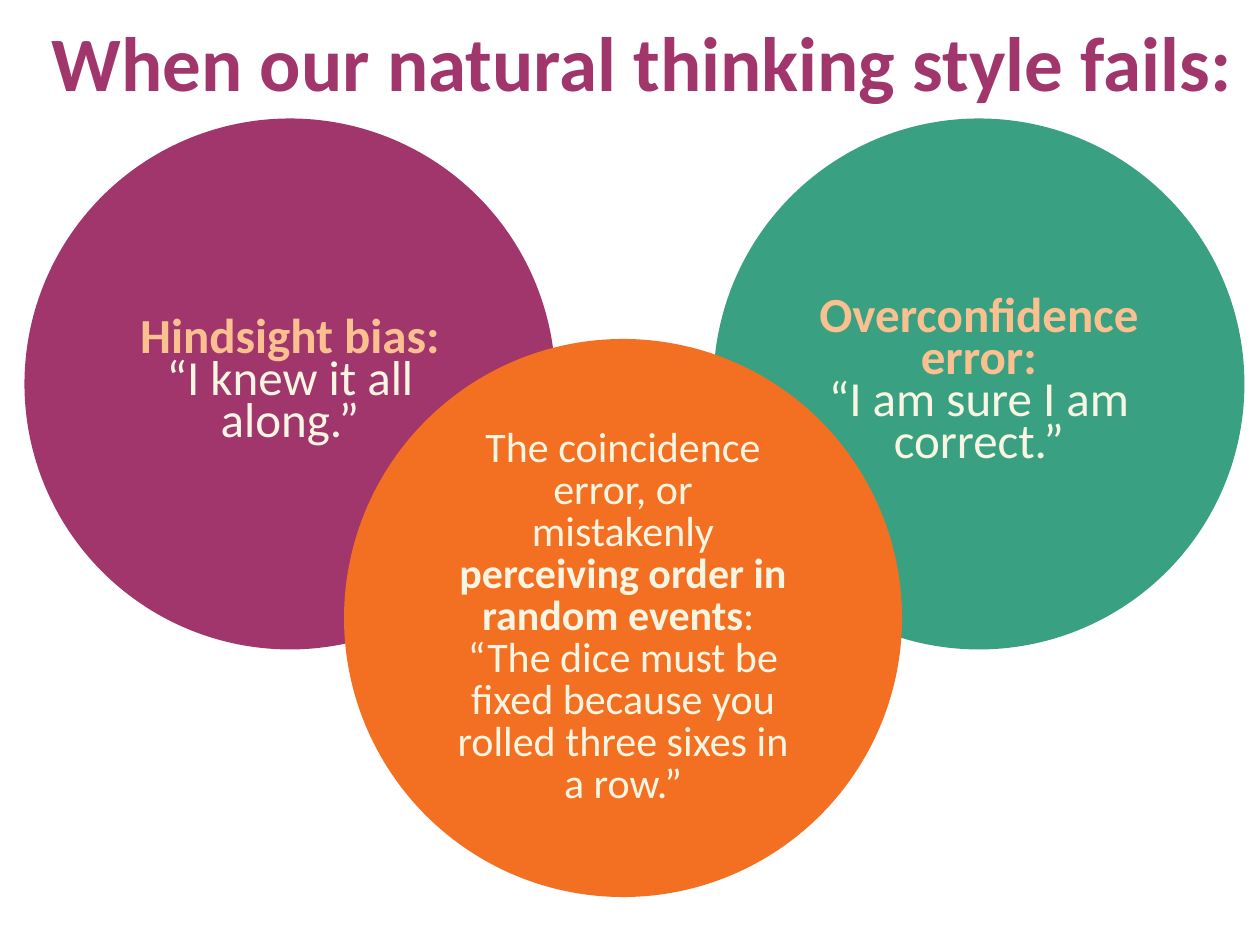
from dataclasses import dataclass

from pptx import Presentation
from pptx import util as u
from pptx.dml.color import RGBColor
from pptx.enum import shapes, text

PX_PER_INCH = 126


@dataclass(frozen=True)
class Theme:
    font: str = "Calibri"
    plum: str = "A0366C"
    green: str = "3AA082"
    orange: str = "F36F21"
    peach: str = "FAC090"
    cream: str = "F8F6E3"
    title_size: int = 44
    large: int = 28
    small: int = 24
    title_spacing: int = 42
    body_spacing: int = 24


THEME = Theme()

TITLE = "When our natural thinking style fails:"
TITLE_BOX = (0, 0, 1260, 141)
TITLE_MARGINS = (38, 6, 13, 6)
CIRCLE_MARGINS = (25, 25, 25, 25)

# Each paragraph is a list of runs: (words, colour, bold)
CIRCLES = [
    {"centre": (290, 384), "diameter": 531, "fill": THEME.plum, "size": THEME.large,
     "paragraphs": [
         [("Hindsight bias:", THEME.peach, True)],
         [("“I knew it all along.”", THEME.cream, False)]]},
    {"centre": (979, 384), "diameter": 531, "fill": THEME.green, "size": THEME.large,
     "paragraphs": [
         [("Overconfidence error:", THEME.peach, True)],
         [("“I am sure I am correct.”", THEME.cream, False)]]},
    {"centre": (623, 618), "diameter": 558, "fill": THEME.orange, "size": THEME.small,
     "paragraphs": [
         [("The coincidence error, or", THEME.cream, False)],
         [("mistakenly ", THEME.cream, False),
          ("perceiving order in random events", THEME.cream, True),
          (": ", THEME.cream, False)],
         [("“The dice must be fixed because you rolled three sixes in a row.”",
           THEME.cream, False)]]},
]


def px(length):
    return u.Emu(round(length * u.Inches(1) / PX_PER_INCH))


def write_text(shape, paragraphs, size, spacing, margins):
    frame = shape.text_frame
    frame.word_wrap = True
    frame.auto_size = text.MSO_AUTO_SIZE.NONE
    frame.vertical_anchor = text.MSO_ANCHOR.MIDDLE
    (frame.margin_left, frame.margin_top,
     frame.margin_right, frame.margin_bottom) = map(px, margins)
    for index, runs in enumerate(paragraphs):
        paragraph = frame.add_paragraph() if index else frame.paragraphs[0]
        paragraph.alignment = text.PP_ALIGN.CENTER
        paragraph.line_spacing = u.Pt(spacing)
        paragraph.space_before = paragraph.space_after = u.Pt(0)
        for words, colour, bold in runs:
            run = paragraph.add_run()
            run.text = words
            run.font.name = THEME.font
            run.font.size = u.Pt(size)
            run.font.bold = bold
            run.font.color.rgb = RGBColor.from_string(colour)


def add_title(slide):
    title = slide.shapes.title
    title.left, title.top, title.width, title.height = map(px, TITLE_BOX)
    write_text(title, [[(TITLE, THEME.plum, True)]],
               THEME.title_size, THEME.title_spacing, TITLE_MARGINS)


def add_circle(slide, circle):
    diameter = circle["diameter"]
    left, top = (middle - diameter / 2 for middle in circle["centre"])
    shape = slide.shapes.add_shape(
        shapes.MSO_SHAPE.OVAL, px(left), px(top), px(diameter), px(diameter))
    shape.shadow.inherit = False
    shape.fill.solid()
    shape.fill.fore_color.rgb = RGBColor.from_string(circle["fill"])
    shape.line.fill.background()
    write_text(shape, circle["paragraphs"], circle["size"],
               THEME.body_spacing, CIRCLE_MARGINS)


def main():
    presentation = Presentation()
    presentation.slide_width = px(1260)
    presentation.slide_height = px(945)
    slide = presentation.slides.add_slide(presentation.slide_layouts[5])
    add_title(slide)
    for circle in CIRCLES:
        add_circle(slide, circle)
    presentation.save("out.pptx")


if __name__ == "__main__":
    main()
